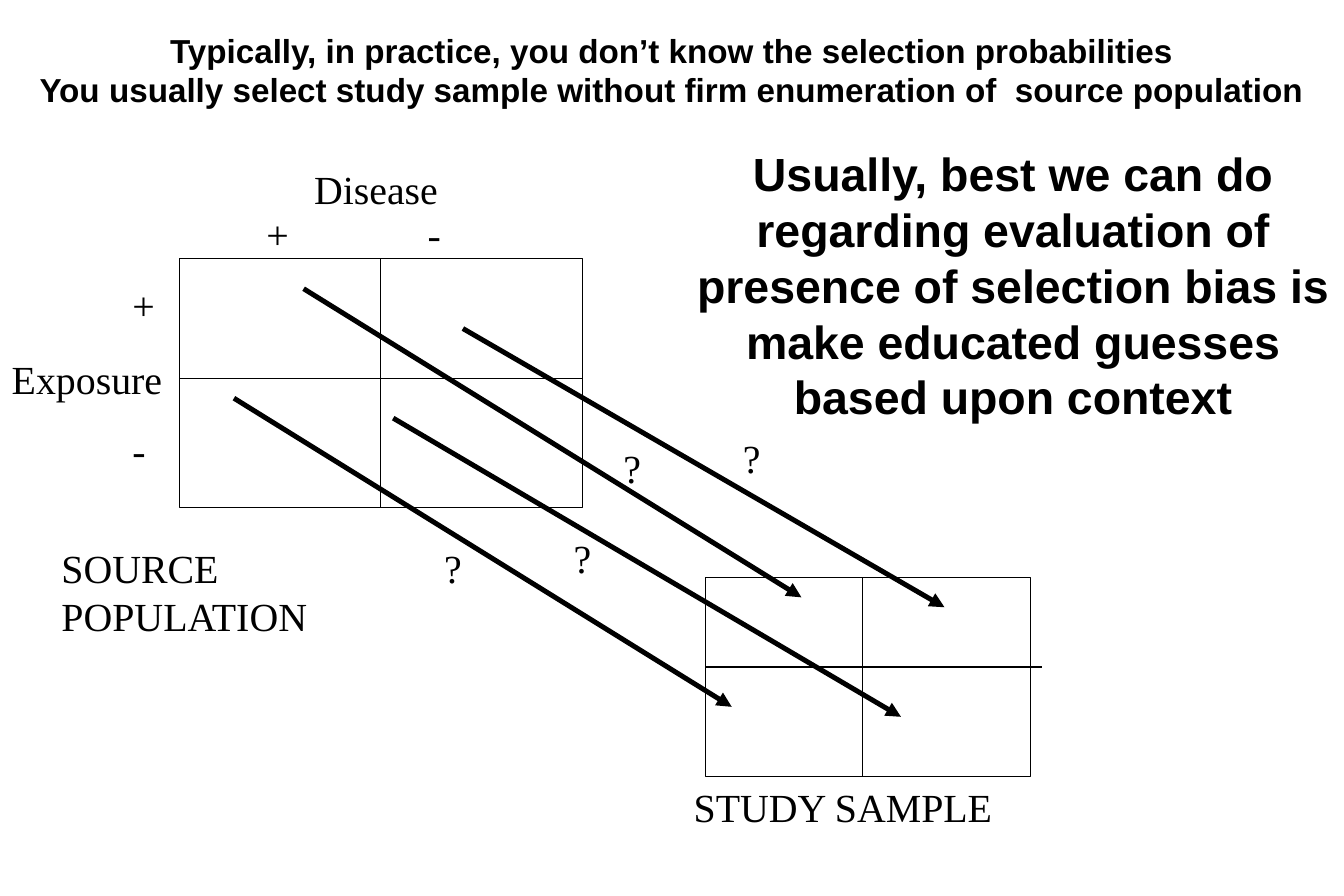
import pptx
import pptx.dml.color
import pptx.enum.shapes
import pptx.enum.text
import pptx.oxml.ns
import pptx.util
from lxml import etree

PX = 9525  # EMU per px, 96 px to the inch
COLORS = {"ink": "000000", "paper": "FFFFFF"}
SERIF = {"name": "Times New Roman", "size": pptx.util.Pt(24), "bold": False}
HEADING = {"name": "Arial", "size": pptx.util.Pt(20), "bold": True}
ADVICE = {**HEADING, "size": pptx.util.Pt(28)}
LEFT = pptx.enum.text.PP_ALIGN.LEFT
CENTER = pptx.enum.text.PP_ALIGN.CENTER


def rgb(key):
    return pptx.dml.color.RGBColor.from_string(COLORS[key])


class SlideBuilder:
    def __init__(self, prs):
        self.s = prs.slides.add_slide(prs.slide_layouts[5])
        fill = self.s.background.fill
        fill.solid()
        fill.fore_color.rgb = rgb("paper")

    def fill_text(self, tf, lines, style, align):
        for i, line in enumerate(lines):
            p = tf.paragraphs[0] if i == 0 else tf.add_paragraph()
            p.alignment = align
            r = p.add_run()
            r.text = line
            for name, value in style.items():
                setattr(r.font, name, value)
            r.font.color.rgb = rgb("ink")

    def title(self, x, y, w, h, lines):
        sp = self.s.shapes.title
        sp.left, sp.top, sp.width, sp.height = (v * PX for v in (x, y, w, h))
        tf = sp.text_frame
        tf.word_wrap = True
        tf.auto_size = pptx.enum.text.MSO_AUTO_SIZE.NONE
        tf.vertical_anchor = pptx.enum.text.MSO_ANCHOR.MIDDLE
        self.fill_text(tf, lines, HEADING, CENTER)

    def text(self, x, y, w, h, text, style=SERIF, align=LEFT, wrap=True):
        sp = self.s.shapes.add_textbox(x * PX, y * PX, w * PX, h * PX)
        sp.text_frame.word_wrap = wrap
        self.fill_text(sp.text_frame, [text], style, align)

    def box(self, x, y, w, h):
        sp = self.s.shapes.add_shape(
            pptx.enum.shapes.MSO_SHAPE.RECTANGLE, x * PX, y * PX, w * PX, h * PX)
        sp.shadow.inherit = False
        sp.fill.background()
        sp.line.color.rgb = rgb("ink")
        sp.line.width = pptx.util.Pt(0.75)
        return sp

    def line(self, x1, y1, x2, y2, width=0.75, arrow=False):
        c = self.s.shapes.add_connector(
            pptx.enum.shapes.MSO_CONNECTOR.STRAIGHT, x1 * PX, y1 * PX, x2 * PX, y2 * PX)
        c.line.color.rgb = rgb("ink")
        c.line.width = pptx.util.Pt(width)
        qn = pptx.oxml.ns.qn
        sp_pr = c.element.spPr
        if arrow:
            etree.SubElement(sp_pr.get_or_add_ln(), qn("a:tailEnd"), type="triangle")
        etree.SubElement(sp_pr, qn("a:effectLst"))
        return c


def main():
    prs = pptx.Presentation()
    prs.slide_width, prs.slide_height = 1080 * PX, 720 * PX
    b = SlideBuilder(prs)

    b.title(0, 16, 1080, 80, [
        "Typically, in practice, you don’t know the selection probabilities",
        "You usually select study sample without firm enumeration of  source population",
    ])

    # Source population table
    source = b.box(144, 208, 324, 200)
    divider = b.line(306, 208, 306, 408)
    divider.begin_connect(source, 0)
    divider.end_connect(source, 2)
    b.line(144, 304, 468, 304)

    # Study sample table
    b.box(567, 464, 261, 160)
    b.line(693, 464, 693, 624)
    b.line(567, 536, 837, 536)

    # Table labels
    for x, y, w, label in [
        (243, 128, 119, "Disease"),
        (0, 280, 140, "Exposure"),
        (548, 624, 260, "STUDY SAMPLE"),
    ]:
        b.text(x, y, w, 48, label, wrap=False)
    b.text(40, 432, 240, 86, "SOURCE POPULATION")

    # Signs of the disease columns and exposure rows
    for sign, x, y in [("+", 199, 221), ("-", 325, 337)]:
        b.text(x, 164, 48, 48, sign, align=CENTER)
        b.text(97, y, 42, 48, sign)

    # Selection arrows with their unknown probabilities
    for arrow, mark in [
        ((372, 264, 759, 488), (580, 344)),
        ((244, 232, 644, 480), (484, 352)),
        ((316, 336, 724, 576), (444, 424)),
        ((188, 320, 588, 568), (340, 432)),
    ]:
        b.line(*arrow, width=3, arrow=True)
        b.text(*mark, 48, 48, "?", align=CENTER)

    # Advice
    b.text(546, 112, 536, 236,
           "Usually, best we can do regarding evaluation of presence of selection "
           "bias is make educated guesses based upon context", ADVICE, CENTER)

    prs.save("out.pptx")


if __name__ == "__main__":
    main()
